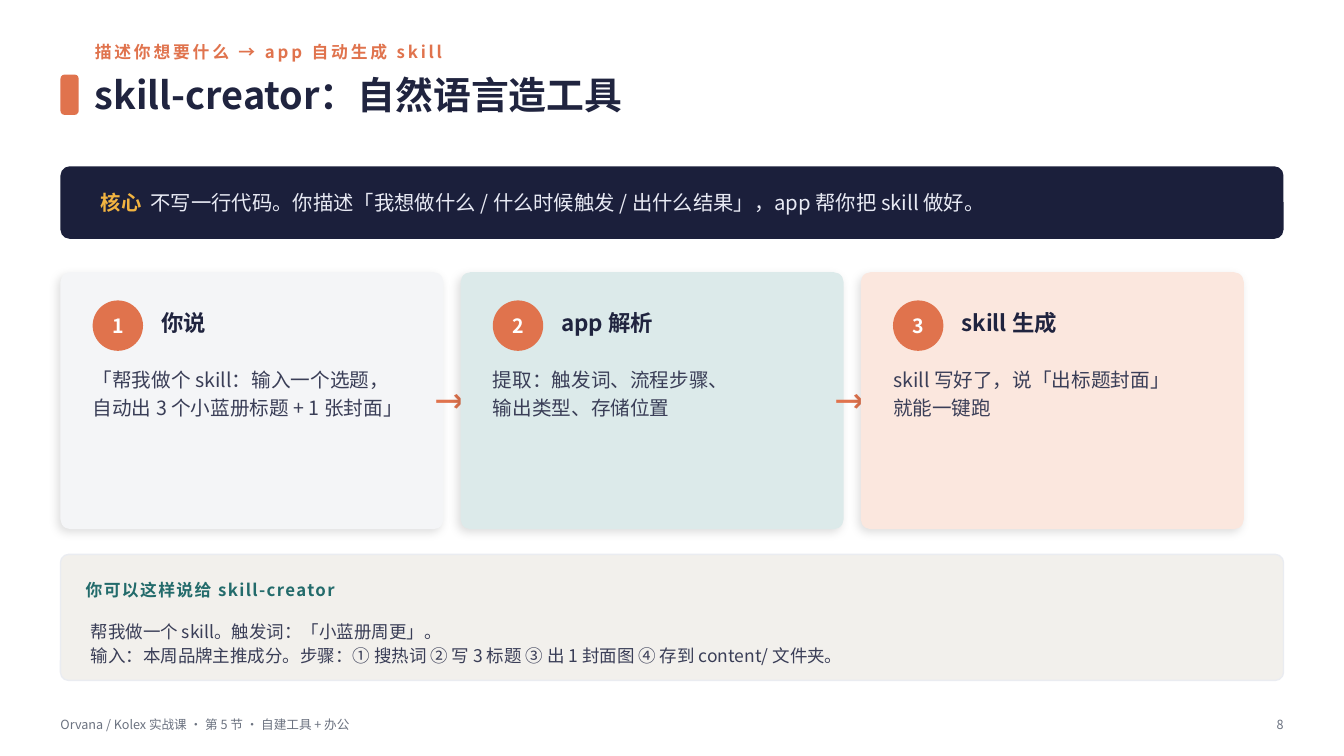
import pptx
import pptx.dml.color
import pptx.enum.shapes
import pptx.enum.text
import pptx.oxml
import pptx.oxml.ns
import pptx.util
from lxml import etree

COLORS = {
    "accent": "E0734D", "title": "20243F", "navy": "1B1F3B", "gold": "F2B441",
    "pale": "E8EAF4", "body": "3A3E57", "teal": "236B6B", "white": "FFFFFF",
    "gray_card": "F4F5F7", "teal_card": "DCEAEA", "peach_card": "FBE7DE",
    "prompt": "F2F0EC", "border": "EAECF1", "muted": "6B7280",
}
SHAPE = pptx.enum.shapes.MSO_SHAPE
ALIGN = pptx.enum.text.PP_ALIGN
ANCHOR = pptx.enum.text.MSO_ANCHOR
Pt = pptx.util.Pt
qn = pptx.oxml.ns.qn


def rgb(color):
    return pptx.dml.color.RGBColor.from_string(COLORS[color])


class SlideBuilder:
    font_name = "Noto Sans CJK SC"

    def __init__(self, slide):
        self.slide = slide

    def shape(self, kind, box, fill, radius=None, border=None, shadow=False):
        shape = self.slide.shapes.add_shape(kind, *map(Pt, box))
        shape.shadow.inherit = False
        shape.fill.solid()
        shape.fill.fore_color.rgb = rgb(fill)
        if radius is not None:
            shape.adjustments[0] = radius / min(box[2:])
        if border:
            shape.line.color.rgb = rgb(border)
            shape.line.width = Pt(1)
        else:
            shape.line.fill.background()
        if shadow:
            self.soft_shadow(shape)
        return shape

    def panel(self, box, fill, radius, **options):
        return self.shape(SHAPE.ROUNDED_RECTANGLE, box, fill, radius, **options)

    def soft_shadow(self, shape):
        effects = shape._element.spPr.find(qn("a:effectLst"))
        outer = etree.SubElement(effects, qn("a:outerShdw"), blurRad=str(Pt(7)),
                                 dist=str(Pt(3)), dir=str(135 * 60000),
                                 algn="bl", rotWithShape="0")
        black = etree.SubElement(outer, qn("a:srgbClr"), val="000000")
        etree.SubElement(black, qn("a:alpha"), val="12000")

    def text(self, box, lines, *style, **options):
        textbox = self.slide.shapes.add_textbox(*map(Pt, box))
        self.set_lines(textbox, lines, *style, **options)

    def badge(self, box, number):
        circle = self.shape(SHAPE.OVAL, box, "accent")
        self.set_lines(circle, [number], 14, "white", bold=True, align=ALIGN.CENTER)

    def set_lines(self, shape, lines, size, color, bold=False, align=ALIGN.LEFT,
                  anchor=ANCHOR.MIDDLE, spacing=None, tracking=None):
        """A line is a string, or a list of (text, color, bold) runs."""
        frame = shape.text_frame
        frame.word_wrap = True
        frame.vertical_anchor = anchor
        frame.margin_left = frame.margin_right = 0
        frame.margin_top = frame.margin_bottom = 0
        for index, line in enumerate(lines):
            paragraph = frame.add_paragraph() if index else frame.paragraphs[0]
            paragraph.alignment = align
            if spacing:
                paragraph.line_spacing = spacing
            font = paragraph.font
            font.name, font.size = self.font_name, Pt(size)
            if isinstance(line, str):
                paragraph.add_run().text = line
                font.bold, font.color.rgb = bold, rgb(color)
            else:
                for content, run_color, run_bold in line:
                    run = paragraph.add_run()
                    run.text = content
                    run.font.bold, run.font.color.rgb = run_bold, rgb(run_color)
            # East Asian typeface and letter spacing
            defaults = paragraph._p.pPr.find(qn("a:defRPr"))
            etree.SubElement(defaults, qn("a:ea"), typeface=self.font_name)
            if tracking:
                defaults.set("spc", str(tracking * 100))


def main():
    deck = pptx.Presentation()
    deck.slide_width, deck.slide_height = Pt(960), Pt(540)
    page = SlideBuilder(deck.slides.add_slide(deck.slide_layouts[6]))
    left, full_width = 43.2, 873.6

    # Heading
    page.text((67.7, 25.9, 849, 21.6), ["描述你想要什么 → app 自动生成 skill"],
              12, "accent", bold=True, tracking=2)
    page.panel((left, 53.3, 13, 28.8), "accent", 2.9)
    page.text((67.7, 46.1, 849, 43.2), ["skill-creator：自然语言造工具"],
              27, "title", bold=True)

    # Core message
    page.panel((left, 118.8, full_width, 51.8), "navy", 6.5)
    core = [("核心  ", "gold", True),
            ("不写一行代码。你描述「我想做什么 / 什么时候触发 / 出什么结果」，"
             "app 帮你把 skill 做好。", "pale", False)]
    page.text((72, 118.8, 816, 51.8), [core], 14.5, "pale")

    # Three steps
    steps = [
        ("你说", "gray_card",
         ["「帮我做个 skill：输入一个选题，", "自动出 3 个小蓝册标题 + 1 张封面」"]),
        ("app 解析", "teal_card",
         ["提取：触发词、流程步骤、", "输出类型、存储位置"]),
        ("skill 生成", "peach_card",
         ["skill 写好了，说「出标题封面」", "就能一键跑"]),
    ]
    card_top, card_width, card_height, pitch = 194.4, 273.6, 183.6, 285.84
    for index, (heading, fill, details) in enumerate(steps):
        x = left + index * pitch
        page.panel((x, card_top, card_width, card_height), fill, 7.2, shadow=True)
        page.badge((x + 23, card_top + 20.2, 36, 36), str(index + 1))
        page.text((x + 72, card_top + 18, 187.2, 36), [heading],
                  16, "title", bold=True)
        page.text((x + 23, card_top + 64.8, 234, 108), details,
                  14, "body", anchor=ANCHOR.TOP, spacing=1.2)
        if index < len(steps) - 1:
            page.text((x + pitch - 18, card_top, 18, card_height), ["→"],
                      22, "accent", bold=True, align=ALIGN.CENTER)

    # Example prompt
    page.panel((left, 396, full_width, 90), "prompt", 5.8, border="border")
    page.text((61.2, 409, 837.4, 25.2), ["你可以这样说给 skill-creator"],
              12, "teal", bold=True, tracking=1)
    page.text((64.8, 440.6, 830.2, 32.4),
              ["帮我做一个 skill。触发词：「小蓝册周更」。",
               "输入：本周品牌主推成分。步骤：① 搜热词 ② 写 3 标题 ③ 出 1 封面图 "
               "④ 存到 content/ 文件夹。"],
              12.5, "body", anchor=ANCHOR.TOP, spacing=1.18)

    # Footer
    page.text((left, 506.9, 648, 21.6),
              ["Orvana / Kolex 实战课 · 第 5 节 · 自建工具 + 办公"], 9, "muted")
    page.text((866.4, 506.9, 50.4, 21.6), ["8"], 9, "muted", align=ALIGN.RIGHT)

    deck.save("out.pptx")


if __name__ == "__main__":
    main()
